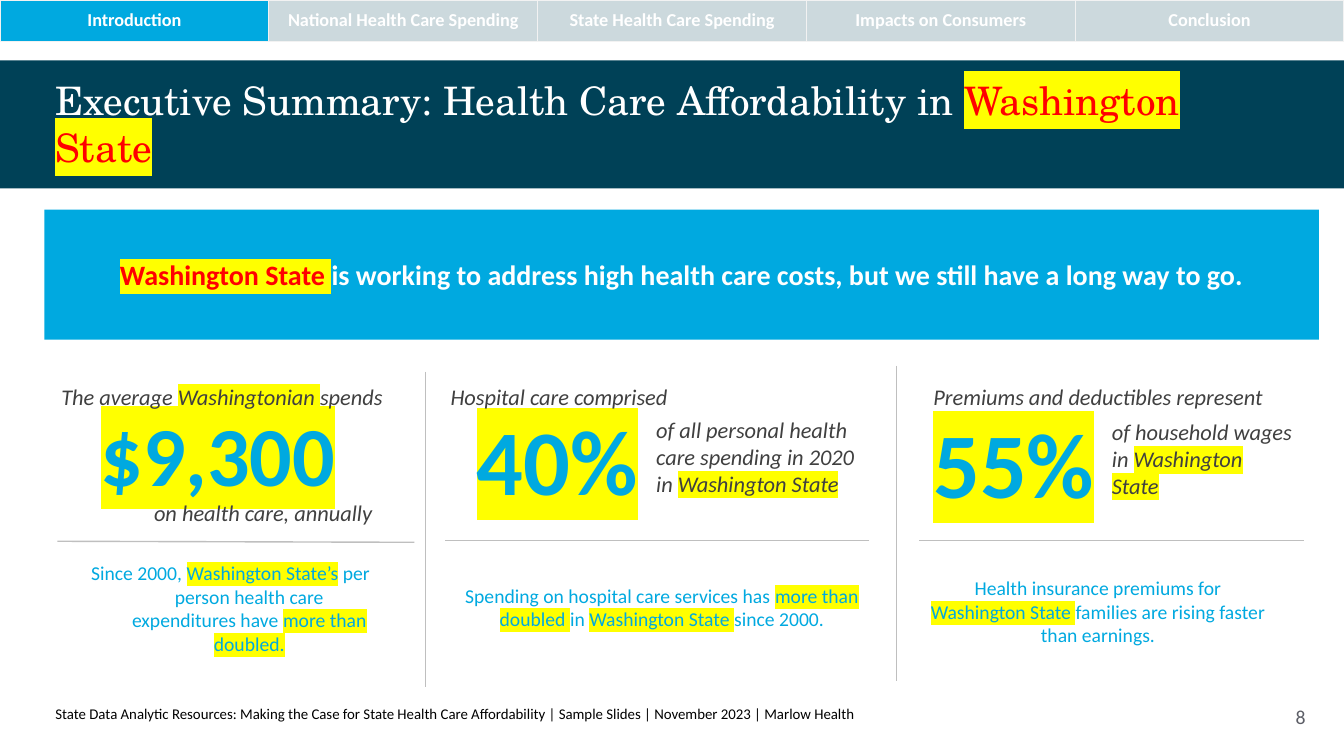
from dataclasses import dataclass, field
from typing import Any

from lxml import etree
from pptx import Presentation
from pptx import util as u
from pptx.dml import color
from pptx.enum import shapes, text
from pptx.oxml import ns
from pptx.text import text as frames

Box = tuple[float, float, float, float]
MARK = "~"  # encloses highlighted words


@dataclass(frozen=True)
class Theme:
    navy: str = "004157"
    blue: str = "00A9E0"
    pale: str = "CCD9DD"
    white: str = "FFFFFF"
    black: str = "000000"
    red: str = "FF0000"
    yellow: str = "FFFF00"
    gray: str = "404040"
    number: str = "5C5E66"
    rule: str = "BFBFBF"
    border: str = "F2F2F2"
    heading_font: str = "TeX Gyre Schola"
    body_font: str = "Calibri"
    title: float = 28
    banner: float = 20
    label: float = 16
    note: float = 14
    page_number: float = 14.1
    tab: float = 13
    footer: float = 10.6


THEME = Theme()


@dataclass(frozen=True)
class Style:
    size: float
    color: str
    marked_color: str = ""
    font: dict[str, Any] = field(default_factory=dict)
    para: dict[str, Any] = field(default_factory=dict)
    frame: dict[str, Any] = field(default_factory=dict)


@dataclass(frozen=True)
class Label:
    box: Box
    words: str
    big: float = 0  # size of a headline figure, 0 for plain labels


@dataclass(frozen=True)
class Rule:
    start: tuple[float, float]
    end: tuple[float, float]


def margins(left: float, top: float, right: float, bottom: float) -> dict[str, Any]:
    sides = ("left", "top", "right", "bottom")
    return {f"margin_{side}": u.Inches(gap) for side, gap in zip(sides, (left, top, right, bottom))}


MIDDLE = {"vertical_anchor": text.MSO_ANCHOR.MIDDLE, "auto_size": text.MSO_AUTO_SIZE.NONE}
CENTER = {"alignment": text.PP_ALIGN.CENTER}
GROW = {"auto_size": text.MSO_AUTO_SIZE.SHAPE_TO_FIT_TEXT}

TITLE = Style(THEME.title, THEME.white, THEME.red, {"name": THEME.heading_font, "bold": False},
              {"alignment": text.PP_ALIGN.LEFT}, MIDDLE | margins(0.11, 0.06, 0.11, 0.06))
BANNER = Style(THEME.banner, THEME.white, THEME.red, {"bold": True},
               CENTER | {"space_before": u.Pt(12)}, MIDDLE | margins(0.2, 0.2, 0.2, 0.2))
NOTE = Style(THEME.note, THEME.blue, para=CENTER | {"space_before": u.Pt(24)},
             frame=MIDDLE | margins(0.11, 0, 0.11, 0.06))
LABEL = Style(THEME.label, THEME.gray, font={"italic": True}, frame=GROW)
TAB = Style(THEME.tab, THEME.white, font={"bold": True}, para=CENTER)
FOOTER = Style(THEME.footer, THEME.black, para={"line_spacing": 0.8}, frame=margins(0.11, 0, 0, 0))
NUMBER = Style(THEME.page_number, THEME.number, para=CENTER,
               frame=MIDDLE | margins(0, 0, 0, 0) | {"word_wrap": False})

TABS = ("Introduction", "National Health Care Spending", "State Health Care Spending",
        "Impacts on Consumers", "Conclusion")
STATS = (
    (Label((0.9, 3.94, 2.79, 1.11), "~$9,300~", 60),
     Label((0.51, 3.75, 3.47, 0.37), "The average ~Washingtonian ~spends"),
     Label((1.43, 4.9, 2.44, 0.37), "on health care, annually")),
    (Label((4.63, 3.95, 2.63, 1.21), "~40%~", 66),
     Label((4.37, 3.75, 3.29, 0.37), "Hospital care comprised"),
     Label((6.41, 4.08, 2.3, 0.91),
           "of all personal health care spending in 2020 in ~Washington State~")),
    (Label((9.16, 3.98, 2.63, 1.21), "~55%~", 66),
     Label((9.16, 3.75, 3.59, 0.37), "Premiums and deductibles represent"),
     Label((10.93, 4.1, 2, 0.91), "of household wages in ~Washington State~")),
)
FIRST_NOTE = Label((0.74, 5.51, 3.09, 1.11), "Since 2000, ~Washington State’s~ per person health "
                   "care expenditures have ~more than doubled.~")
OTHER_NOTES = (
    Label((4.43, 5.41, 4.27, 1.29), "Spending on hospital care services has ~more than doubled ~"
          "in ~Washington State ~since 2000."),
    Label((9.08, 5.52, 3.62, 1.15), "Health insurance premiums for ~Washington State ~"
          "families are rising faster than earnings."),
)
RULES = (
    Rule((4.22, 3.69), (4.22, 6.82)),
    Rule((8.89, 3.63), (8.89, 6.76)),
    Rule((4.11, 5.38), (0.57, 5.37)),
    Rule((8.62, 5.36), (4.41, 5.36)),
    Rule((12.93, 5.36), (9.12, 5.36)),
)


def rgb(code: str) -> color.RGBColor:
    return color.RGBColor.from_string(code)


def set_all(target: Any, values: dict[str, Any]) -> None:
    for name, value in values.items():
        setattr(target, name, value)


def add_color(parent: Any, tag: str, code: str) -> Any:
    holder = etree.SubElement(parent, ns.qn(tag))
    etree.SubElement(holder, ns.qn("a:srgbClr"), val=code)
    return holder


def write(frame: frames.TextFrame, words: str, style: Style) -> None:
    set_all(frame, {"word_wrap": True} | style.frame)
    para = frame.paragraphs[0]
    set_all(para, style.para)
    for index, piece in enumerate(words.split(MARK)):
        if not piece:
            continue
        marked = index % 2 == 1
        span = para.add_run()
        span.text = piece
        set_all(span.font, {"name": THEME.body_font, "size": u.Pt(style.size)} | style.font)
        span.font.color.rgb = rgb(style.marked_color if marked and style.marked_color else style.color)
        if marked:
            props = span._r.get_or_add_rPr()
            highlight = add_color(props, "a:highlight", THEME.yellow)
            props.find(ns.qn("a:solidFill")).addnext(highlight)


def add_text(parent: Any, box: Box, words: str, style: Style) -> None:
    write(parent.add_textbox(*map(u.Inches, box)).text_frame, words, style)


def add_block(page: Any, box: Box, fill: str) -> Any:
    block = page.shapes.add_shape(shapes.MSO_SHAPE.RECTANGLE, *map(u.Inches, box))
    block.shadow.inherit = False
    block.fill.solid()
    block.fill.fore_color.rgb = rgb(fill)
    block.line.fill.background()
    return block


def fill_placeholder(holder: Any, box: Box, words: str, style: Style) -> None:
    set_all(holder, dict(zip(("left", "top", "width", "height"), map(u.Inches, box))))
    write(holder.text_frame, words, style)


def add_tabs(page: Any, width: float) -> None:
    table = page.shapes.add_table(1, len(TABS), 0, 0, u.Inches(width), u.Inches(0.41)).table
    set_all(table, {"first_row": False, "horz_banding": False})
    for index, (cell, name) in enumerate(zip(table.rows[0].cells, TABS)):
        write(cell.text_frame, name, TAB)
        cell.vertical_anchor = text.MSO_ANCHOR.MIDDLE
        props = cell._tc.get_or_add_tcPr()
        for side in ("a:lnL", "a:lnR", "a:lnT", "a:lnB"):
            edge = etree.SubElement(props, ns.qn(side), w=str(u.Pt(1)))
            add_color(edge, "a:solidFill", THEME.border)
        cell.fill.solid()
        cell.fill.fore_color.rgb = rgb(THEME.pale if index else THEME.blue)


def add_rule(page: Any, rule: Rule) -> None:
    line = page.shapes.add_connector(shapes.MSO_CONNECTOR.STRAIGHT,
                                     *map(u.Inches, rule.start + rule.end))
    line.line.color.rgb = rgb(THEME.rule)
    line.line.width = u.Pt(1)
    etree.SubElement(line._element.spPr, ns.qn("a:effectLst"))


def main() -> None:
    deck = Presentation()
    width = 13.33
    set_all(deck, {"slide_width": u.Inches(width), "slide_height": u.Inches(7.5)})
    page = deck.slides.add_slide(deck.slide_layouts[1])

    # Title over its dark band
    band = add_block(page, (0, 0.6, width, 1.27), THEME.navy)
    page.shapes._spTree.insert(2, band._element)
    fill_placeholder(page.shapes.title, (0.44, 0.94, 11.93, 0.57),
                     "Executive Summary: Health Care Affordability in ~Washington State~", TITLE)

    # First note, without the template's bullet
    body = page.placeholders[1]
    fill_placeholder(body, FIRST_NOTE.box, FIRST_NOTE.words, NOTE)
    props = body.text_frame.paragraphs[0]._p.get_or_add_pPr()
    set_all(props, {"marL": 0, "indent": 0})
    etree.SubElement(props, ns.qn("a:buNone"))

    # Navigation tabs and banner
    add_tabs(page, width)
    banner = add_block(page, (0.44, 2.08, 12.64, 1.29), THEME.blue)
    write(banner.text_frame, "~Washington State ~is working to address high health care costs, "
          "but we still have a long way to go.", BANNER)

    # Key figures and remaining notes
    for stat in STATS:
        group = page.shapes.add_group_shape()
        for label in stat:
            figure = Style(label.big, THEME.blue, font={"bold": True}, frame=GROW)
            add_text(group.shapes, label.box, label.words, figure if label.big else LABEL)
    for note in OTHER_NOTES:
        add_text(page.shapes, note.box, note.words, NOTE)
    for rule in RULES:
        add_rule(page, rule)

    # Footer
    add_text(page.shapes, (0.44, 7.02, 8.9, 0.22), "State Data Analytic Resources: Making the Case for "
             "State Health Care Affordability | Sample Slides | November 2023 | Marlow Health", FOOTER)
    add_text(page.shapes, (12.68, 6.82, 0.44, 0.57), "8", NUMBER)
    deck.save("out.pptx")


if __name__ == "__main__":
    main()
